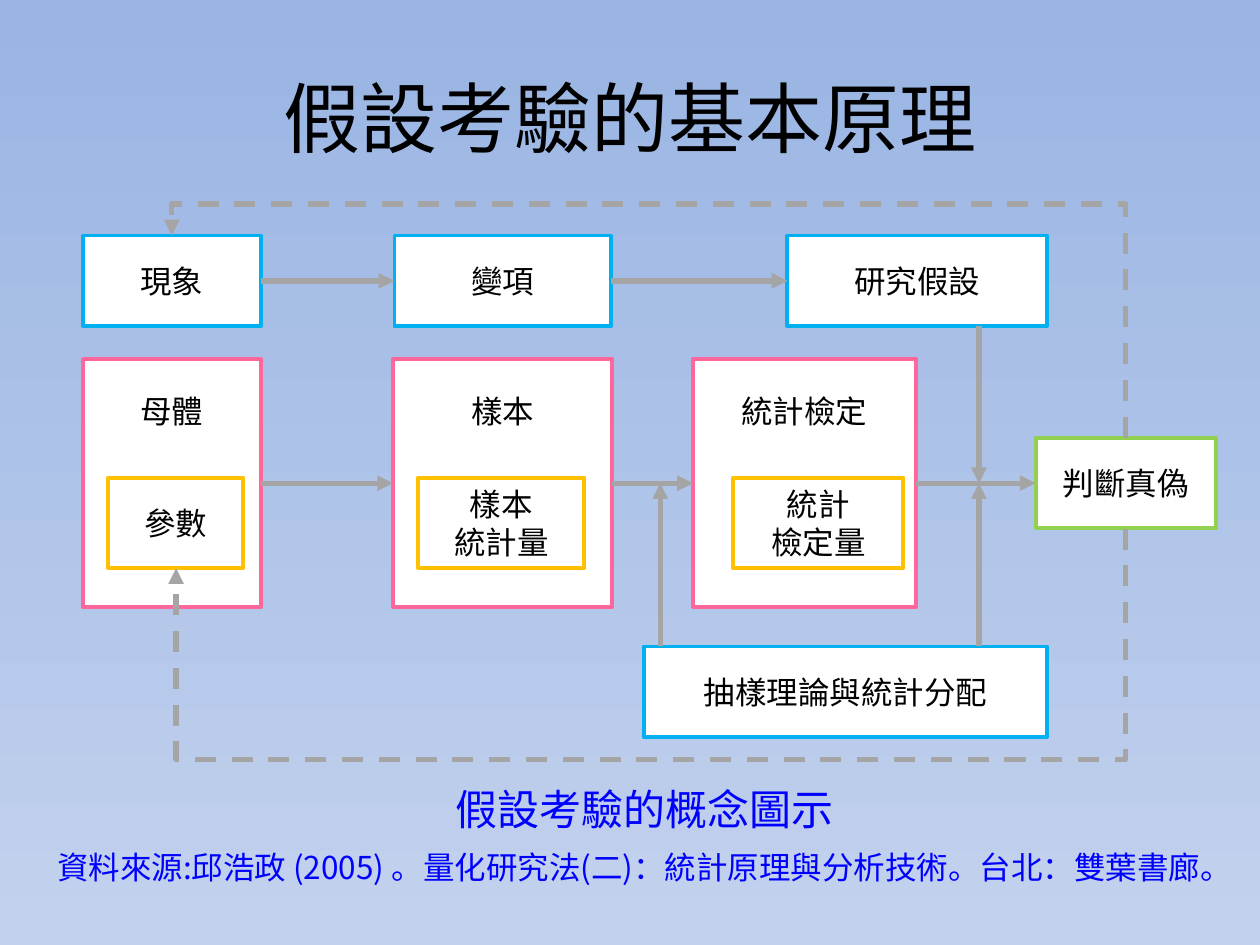
from dataclasses import dataclass

from lxml.etree import SubElement
from pptx import Presentation
from pptx.dml.color import RGBColor
from pptx.enum.dml import MSO_LINE
from pptx.enum.shapes import MSO_CONNECTOR, MSO_SHAPE
from pptx.enum.text import MSO_ANCHOR, PP_ALIGN
from pptx.oxml.ns import qn
from pptx.util import Pt


@dataclass(frozen=True)
class Theme:
    font: str = "Noto Sans CJK SC"
    title: float = 44
    caption: float = 24
    body: float = 18
    leading: float = 1.2
    black: str = "000000"
    blue: str = "0000FF"
    white: str = "FFFFFF"
    concept: str = "00B0F0"
    panel: str = "FF6699"
    measure: str = "FFC000"
    verdict: str = "92D050"
    arrow: str = "A5A5A5"
    sky: tuple = ("9AB5E4", "C2D1ED")
    box_line: float = 2.25
    arrow_line: float = 3


@dataclass(frozen=True)
class Box:
    key: str
    lines: tuple
    x: float
    y: float
    w: float
    h: float
    color: str
    top_text: bool = False


T = Theme()
ROW_H = 51.8
CONCEPT_Y, PANEL_Y, MEASURE_Y = 134.6, 205.2, 272.9
PANEL_H = 141.8
PANEL_INSET = 19
MID_Y = PANEL_Y + PANEL_H / 2


def concept(key: str, text: str, x: float, w: float, y: float = CONCEPT_Y) -> Box:
    return Box(key, (text,), x, y, w, ROW_H, T.concept)


def panel(key: str, text: str, x: float, w: float) -> Box:
    return Box(key, (text,), x, PANEL_Y, w, PANEL_H, T.panel, True)


def measure(key: str, lines: tuple, x: float, w: float) -> Box:
    return Box(key, lines, x, MEASURE_Y, w, ROW_H, T.measure)


BOXES = [
    concept("phenomenon", "現象", 47.5, 101.5),
    concept("variable", "變項", 225.4, 123.8),
    concept("hypothesis", "研究假設", 450, 148.3),
    panel("population", "母體", 47.5, 101.5),
    measure("parameter", ("參數",), 61.9, 77),
    panel("sample", "樣本", 224.6, 125.3),
    measure("statistic", ("樣本", "統計量"), 239, 95),
    panel("test", "統計檢定", 396, 127.4),
    measure("test_statistic", ("統計", "檢定量"), 419, 97.2),
    Box("verdict", ("判斷真偽",), 591.8, MID_Y - ROW_H / 2, 103, ROW_H, T.verdict),
    concept("theory", "抽樣理論與統計分配", 367.9, 230.4, 369.4),
]
LINKS = [
    ("population", "sample"),
    ("sample", "test"),
    ("test", "verdict"),
    ("phenomenon", "variable"),
    ("variable", "hypothesis"),
]
RISERS = [
    (377.3, 369.4, MID_Y),
    (559.4, 369.4, MID_Y),
    (559.4, CONCEPT_Y + ROW_H, MID_Y),
]


def style(p, size: float, color: str, leading: float = None) -> None:
    p.alignment = PP_ALIGN.CENTER
    if leading:
        p.line_spacing = Pt(size * leading)
    p.font.size = Pt(size)
    p.font.color.rgb = RGBColor.from_string(color)
    p.font.name = T.font
    for r in p.runs:
        SubElement(r._r.get_or_add_rPr(), qn("a:ea"), typeface=T.font)


def draw_box(s, box: Box):
    sp = s.shapes.add_shape(MSO_SHAPE.RECTANGLE, Pt(box.x), Pt(box.y), Pt(box.w), Pt(box.h))
    sp.shadow.inherit = False
    sp.fill.solid()
    sp.fill.fore_color.rgb = RGBColor.from_string(T.white)
    sp.line.color.rgb = RGBColor.from_string(box.color)
    sp.line.width = Pt(T.box_line)
    tf = sp.text_frame
    tf.text = "\n".join(box.lines)
    tf.vertical_anchor = MSO_ANCHOR.TOP if box.top_text else MSO_ANCHOR.MIDDLE
    if box.top_text:
        tf.margin_top = Pt(PANEL_INSET)
    for p in tf.paragraphs:
        style(p, T.body, T.black, T.leading)
    return sp


def draw_arrow(s, x1: float, y1: float, x2: float, y2: float, kind=MSO_CONNECTOR.STRAIGHT):
    c = s.shapes.add_connector(kind, Pt(x1), Pt(y1), Pt(x2), Pt(y2))
    c.line.color.rgb = RGBColor.from_string(T.arrow)
    c.line.width = Pt(T.arrow_line)
    SubElement(c.line._get_or_add_ln(), qn("a:tailEnd"), type="triangle")
    SubElement(c._element.spPr, qn("a:effectLst"))
    return c


def draw_feedback(s, x1: float, y1: float, x2: float, y2: float, turn_y: float) -> None:
    run, rise = x1 - x2, abs(y2 - y1)
    left, top = (x1 + x2 - rise) / 2, (y1 + y2 - run) / 2
    c = draw_arrow(s, left, top, left + rise, top + run, MSO_CONNECTOR.ELBOW)
    c.line.dash_style = MSO_LINE.DASH
    xfrm = c._element.spPr.find(qn("a:xfrm"))
    if y2 > y1:
        xfrm.set("rot", "5400000")
    else:
        xfrm.set("rot", "16200000")
        xfrm.set("flipV", "1")
    guides = c._element.spPr.find(qn("a:prstGeom")).find(qn("a:avLst"))
    bend = round(abs(turn_y - y1) / rise * 100000)
    SubElement(guides, qn("a:gd"), name="adj1", fmla=f"val {bend}")


def draw_title(s) -> None:
    sp = s.shapes.title
    sp.left, sp.top, sp.width, sp.height = Pt(36), Pt(21.6), Pt(648), Pt(90)
    tf = sp.text_frame
    tf.text = "假設考驗的基本原理"
    tf.vertical_anchor = MSO_ANCHOR.MIDDLE
    style(tf.paragraphs[0], T.title, T.black)


def draw_caption(s) -> None:
    tf = s.shapes.add_textbox(Pt(20.2), Pt(442.8), Pt(696.2), Pt(63.4)).text_frame
    tf.word_wrap = True
    tf.margin_top = Pt(5)
    tf.text = (
        "假設考驗的概念圖示\n"
        "資料來源:邱浩政 (2005) 。量化研究法(二)：統計原理與分析技術。台北：雙葉書廊。"
    )
    heading, source = tf.paragraphs
    style(heading, T.caption, T.blue, T.leading)
    style(source, T.body, T.blue, T.leading)
    source.space_before = Pt(8)


def main() -> None:
    prs = Presentation()
    prs.slide_width, prs.slide_height = Pt(720), Pt(540)
    s = prs.slides.add_slide(prs.slide_layouts[5])
    fill = s.background.fill
    fill.gradient()
    fill.gradient_angle = 270
    for position, (stop, color) in enumerate(zip(fill.gradient_stops, T.sky)):
        stop.position = position
        stop.color.rgb = RGBColor.from_string(color)
    draw_title(s)
    draw_caption(s)
    shapes = {box.key: draw_box(s, box) for box in BOXES}
    for start, end in LINKS:
        c = draw_arrow(s, 0, 0, 1, 1)
        c.begin_connect(shapes[start], 3)
        c.end_connect(shapes[end], 1)
    for x, y1, y2 in RISERS:
        draw_arrow(s, x, y1, x, y2)
    verdict_x = 643.3
    draw_feedback(s, verdict_x, MID_Y + ROW_H / 2, 100.6, MEASURE_Y + ROW_H, 434)
    draw_feedback(s, verdict_x, MID_Y - ROW_H / 2, 98.2, CONCEPT_Y, 116.6)
    prs.save("out.pptx")


if __name__ == "__main__":
    main()
